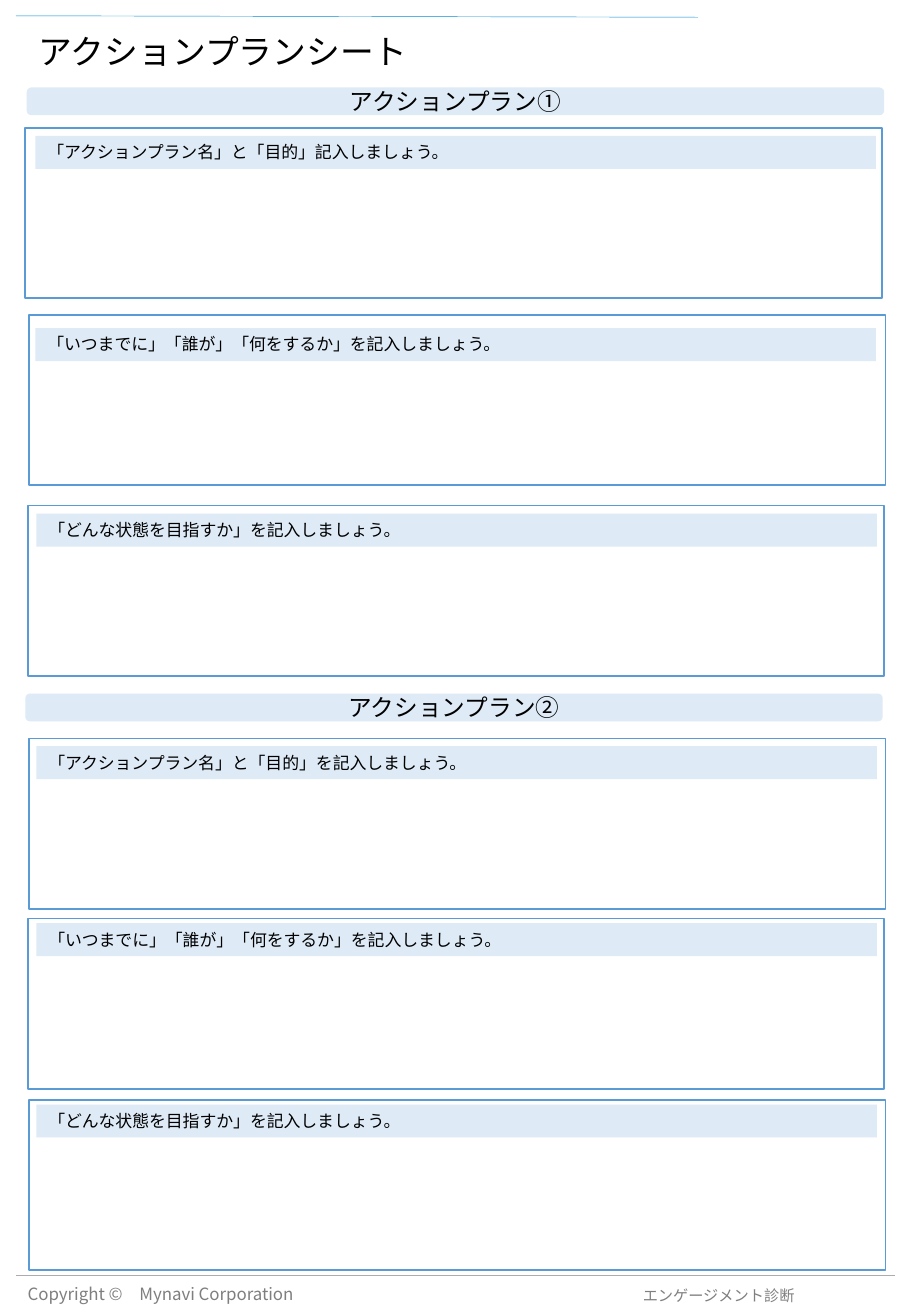
from lxml.etree import SubElement
from pptx import Presentation
from pptx.dml.color import RGBColor
from pptx.enum.shapes import MSO_CONNECTOR, MSO_SHAPE
from pptx.enum.text import MSO_ANCHOR, MSO_AUTO_SIZE, PP_ALIGN
from pptx.oxml.ns import qn
from pptx.util import Cm, Pt

FONT = "Noto Sans CJK JP"
BLACK = RGBColor(0x00, 0x00, 0x00)
GRAY = RGBColor(0x7F, 0x7F, 0x7F)
RULE = RGBColor(0xAC, 0xAC, 0xAC)
PALE = RGBColor(0xDE, 0xEB, 0xF7)
BLUE = RGBColor(0x5B, 0x9B, 0xD5)
SKY = RGBColor(0x00, 0x8C, 0xD6)

BARS = [
    (0.56, 1.83, "アクションプラン①"),
    (0.53, 14.5, "アクションプラン②"),
]
WHEN = "「いつまでに」「誰が」「何をするか」を記入しましょう。"
GOAL = "「どんな状態を目指すか」を記入しましょう。"
PANELS = [
    (0.53, 2.67, 0.74, 2.84, "「アクションプラン名」と「目的」記入しましょう。"),
    (0.61, 6.58, 0.74, 6.86, WHEN),
    (0.58, 10.57, 0.76, 10.74, GOAL),
    (0.61, 15.44, 0.76, 15.6, "「アクションプラン名」と「目的」を記入しましょう。"),
    (0.58, 19.2, 0.76, 19.3, WHEN),
    (0.61, 22.99, 0.76, 23.09, GOAL),
]


def write(frame, text, size, color=BLACK, align=PP_ALIGN.LEFT, anchor=MSO_ANCHOR.MIDDLE):
    frame.word_wrap = True
    frame.vertical_anchor = anchor
    para = frame.paragraphs[0]
    para.text = text
    para.alignment = align
    font = para.font
    font.size = Pt(size)
    font.name = FONT
    font.color.rgb = color
    SubElement(para._p.pPr.find(qn("a:defRPr")), qn("a:ea"), typeface=FONT)
    return para


def add_text(slide, left, top, width, height, text, size, **style):
    box = slide.shapes.add_textbox(Cm(left), Cm(top), Cm(width), Cm(height))
    return box.text_frame, write(box.text_frame, text, size, **style)


def add_block(slide, kind, left, top, width, height):
    block = slide.shapes.add_shape(kind, Cm(left), Cm(top), Cm(width), Cm(height))
    block.shadow.inherit = False
    return block


def add_band(slide, kind, left, top, width, height):
    band = add_block(slide, kind, left, top, width, height)
    band.fill.solid()
    band.fill.fore_color.rgb = PALE
    band.line.fill.background()
    return band.text_frame


def add_bar(slide, left, top, text):
    frame = add_band(slide, MSO_SHAPE.ROUNDED_RECTANGLE, left, top, 17.93, 0.58)
    write(frame, text, 14, align=PP_ALIGN.CENTER)


def add_head(slide, left, top, text):
    frame = add_band(slide, MSO_SHAPE.RECTANGLE, left, top, 17.58, 0.69)
    write(frame, text, 10, anchor=MSO_ANCHOR.TOP)
    frame.auto_size = MSO_AUTO_SIZE.SHAPE_TO_FIT_TEXT


def add_panel(slide, left, top):
    panel = add_block(slide, MSO_SHAPE.RECTANGLE, left, top, 17.91, 3.56)
    panel.fill.background()
    panel.line.color.rgb = BLUE
    panel.line.width = Pt(1)


def add_rule(slide, start, end, color, width):
    rule = slide.shapes.add_connector(MSO_CONNECTOR.STRAIGHT, *map(Cm, start + end))
    rule.line.color.rgb = color
    rule.line.width = Pt(width)
    SubElement(rule._element.spPr, qn("a:effectLst"))


def add_footer(slide):
    para = add_text(slide, 0.33, 26.82, 6.5, 0.51,
                    "Copyright ©\u3000Mynavi Corporation".replace("\u3000", "　"),
                    10, color=GRAY)[1]
    para.line_spacing = 0.9
    frame = add_text(slide, 11.4, 26.87, 5.21, 0.33, "エンゲージメント診断", 9,
                     color=GRAY, align=PP_ALIGN.RIGHT, anchor=MSO_ANCHOR.TOP)[0]
    frame.margin_left = frame.margin_right = frame.margin_bottom = 0
    frame.margin_top = Cm(0.03)
    add_rule(slide, (18.72, 26.67), (0.33, 26.67), RULE, 0.75)


def main():
    deck = Presentation()
    deck.slide_width, deck.slide_height = Cm(19.05), Cm(27.51)
    slide = deck.slides.add_slide(deck.slide_layouts[6])

    add_footer(slide)
    add_rule(slide, (14.6, 0.36), (0.33, 0.33), SKY, 0.25)
    title = add_text(slide, 0.56, 0.43, 17.91, 1.37, "アクションプランシート", 20)[1]
    title.line_spacing = 0.9

    for bar in BARS:
        add_bar(slide, *bar)
    for left, top, inset, drop, text in PANELS:
        add_head(slide, inset, drop, text)
        add_panel(slide, left, top)

    deck.save("out.pptx")


if __name__ == "__main__":
    main()
